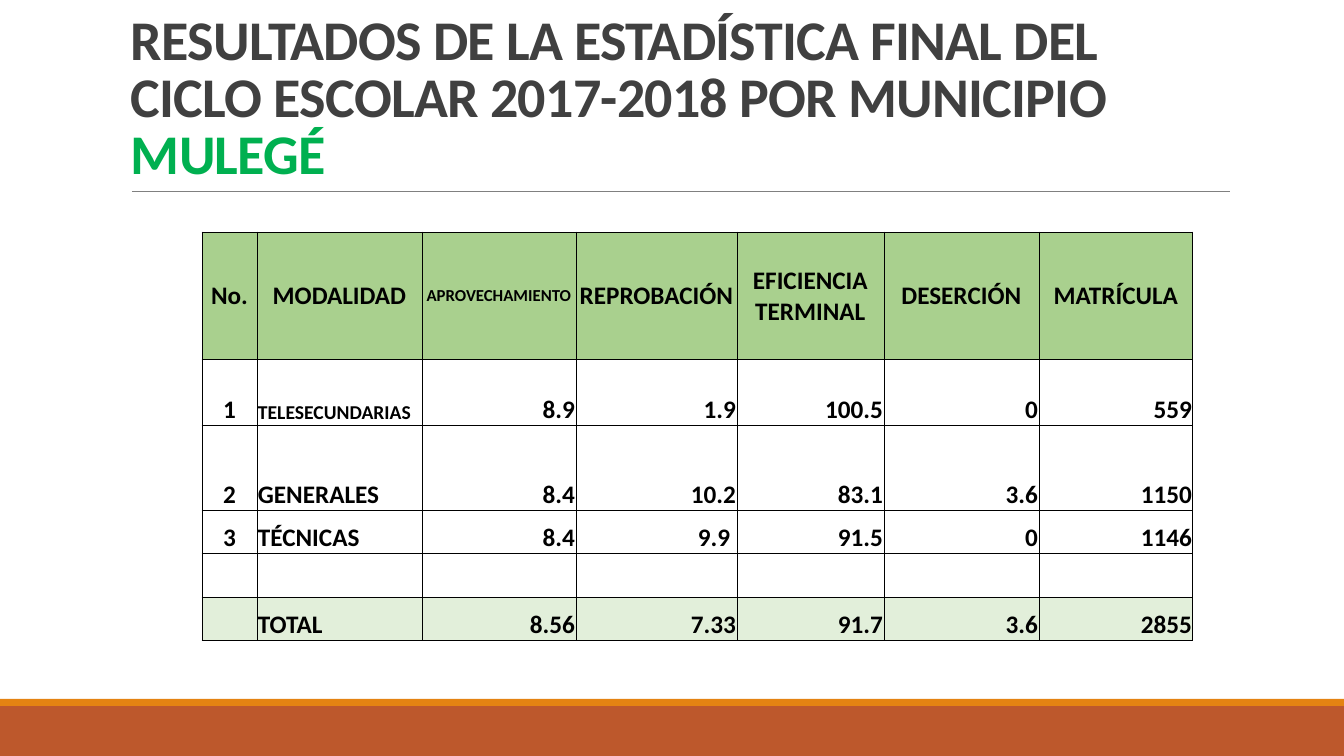
"""Build the slide of final school statistics for the municipality of Mulegé."""
from lxml import etree
from pptx import Presentation
from pptx import util as u
from pptx.dml.color import RGBColor
from pptx.enum import shapes, text
from pptx.oxml import ns

PX = 914400 / 100.8
FONT = "Calibri"
COLORS = {
    "band": "BD582C",
    "stripe": "E48312",
    "rule": "808080",
    "title": "404040",
    "municipality": "00B050",
    "ink": "000000",
    "header": "A9D08E",
    "total": "E2EFDA",
}
COLUMNS = [55, 165, 154, 161, 147, 155, 154]
ROWS = [127, 66, 85, 43, 44, 43]
RESULTS = [
    ["No.", "MODALIDAD", "APROVECHAMIENTO", "REPROBACIÓN",
     "EFICIENCIA TERMINAL", "DESERCIÓN", "MATRÍCULA"],
    ["1", "TELESECUNDARIAS", "8.9", "1.9", "100.5", "0", "559"],
    ["2", "GENERALES", "8.4", "10.2", "83.1", "3.6", "1150"],
    ["3", "TÉCNICAS", " 8.4", "9.9 ", " 91.5", " 0", "1146"],
    [""] * len(COLUMNS),
    ["", "TOTAL", "8.56", "7.33", "91.7", "3.6", "2855"],
]
SMALL_SIZES = {"APROVECHAMIENTO": 12, "TELESECUNDARIAS": 14}
ROW_FILLS = {0: "header", len(RESULTS) - 1: "total"}


def px(length):
    """Turn pixels into EMU."""
    return u.Emu(round(length * PX))


def rgb(name):
    """Look up a named colour."""
    return RGBColor.from_string(COLORS[name])


def add_run(paragraph, words, size, color):
    """Append a bold run and return it."""
    run = paragraph.add_run()
    run.text = words
    run.font.name = FONT
    run.font.size = u.Pt(size)
    run.font.bold = True
    run.font.color.rgb = rgb(color)
    return run


def add_bar(slide, top, height, color):
    """Draw a full-width bar."""
    bar = slide.shapes.add_shape(
        shapes.MSO_SHAPE.RECTANGLE, 0, px(top), px(1344), px(height))
    bar.shadow.inherit = False
    bar.fill.solid()
    bar.fill.fore_color.rgb = rgb(color)
    bar.line.fill.background()


def add_rule(slide, left, right, y):
    """Draw the thin line under the title."""
    rule = slide.shapes.add_connector(
        shapes.MSO_CONNECTOR.STRAIGHT, px(left), px(y), px(right), px(y))
    rule.line.color.rgb = rgb("rule")
    rule.line.width = u.Pt(0.5)
    etree.SubElement(rule._element.spPr, ns.qn("a:effectLst"))


def add_title(slide):
    """Write the title with the municipality highlighted."""
    frame = slide.shapes.add_textbox(
        px(121), px(31), px(1109), px(160)).text_frame
    frame.word_wrap = True
    frame.vertical_anchor = text.MSO_ANCHOR.BOTTOM
    heading = frame.paragraphs[0]
    heading.line_spacing = 0.85
    for words, color in [
        ("RESULTADOS DE LA ESTADÍSTICA FINAL DEL CICLO ESCOLAR 2017-2018 "
         "POR MUNICIPIO ", "title"),
        ("MULEGÉ", "municipality"),
    ]:
        run = add_run(heading, words, 40, color)
        run.font._element.set("spc", "-50")


def add_borders(cell):
    """Give a cell thin lines on all four sides."""
    properties = cell._tc.get_or_add_tcPr()
    for side in ("lnL", "lnR", "lnT", "lnB"):
        border = etree.SubElement(
            properties, ns.qn(f"a:{side}"), w=str(u.Pt(0.5)))
        fill = etree.SubElement(border, ns.qn("a:solidFill"))
        etree.SubElement(fill, ns.qn("a:srgbClr"), val=COLORS["ink"])


def alignment(row, column):
    """Choose the alignment of a table position."""
    if row == 0 or column == 0:
        return text.PP_ALIGN.CENTER
    return text.PP_ALIGN.LEFT if column == 1 else text.PP_ALIGN.RIGHT


def fill_cell(cell, row, column, words):
    """Style one cell and write its words."""
    add_borders(cell)
    if row in ROW_FILLS:
        cell.fill.solid()
        cell.fill.fore_color.rgb = rgb(ROW_FILLS[row])
    else:
        cell.fill.background()
    cell.margin_left = cell.margin_right = cell.margin_top = px(1)
    cell.margin_bottom = 0
    anchors = text.MSO_ANCHOR
    cell.vertical_anchor = anchors.BOTTOM if row else anchors.MIDDLE
    paragraph = cell.text_frame.paragraphs[0]
    paragraph.alignment = alignment(row, column)
    if words:
        add_run(paragraph, words, SMALL_SIZES.get(words, 18), "ink")


def add_results(slide):
    """Add the table of results by school type."""
    results = slide.shapes.add_table(
        len(ROWS), len(COLUMNS), px(202), px(232),
        px(sum(COLUMNS)), px(sum(ROWS))).table
    results.horz_banding = False
    results.first_row = False
    for column, width in zip(results.columns, COLUMNS):
        column.width = px(width)
    for row, height in zip(results.rows, ROWS):
        row.height = px(height)
    for i, values in enumerate(RESULTS):
        for j, words in enumerate(values):
            fill_cell(results.cell(i, j), i, j, words)


def main():
    """Build and save the presentation."""
    deck = Presentation()
    deck.slide_width, deck.slide_height = px(1344), px(756)
    slide = deck.slides.add_slide(deck.slide_layouts[6])
    add_bar(slide, 706, 50, "band")
    add_bar(slide, 699, 7, "stripe")
    add_rule(slide, 132, 1230, 191)
    add_title(slide)
    add_results(slide)
    deck.save("out.pptx")


if __name__ == "__main__":
    main()
